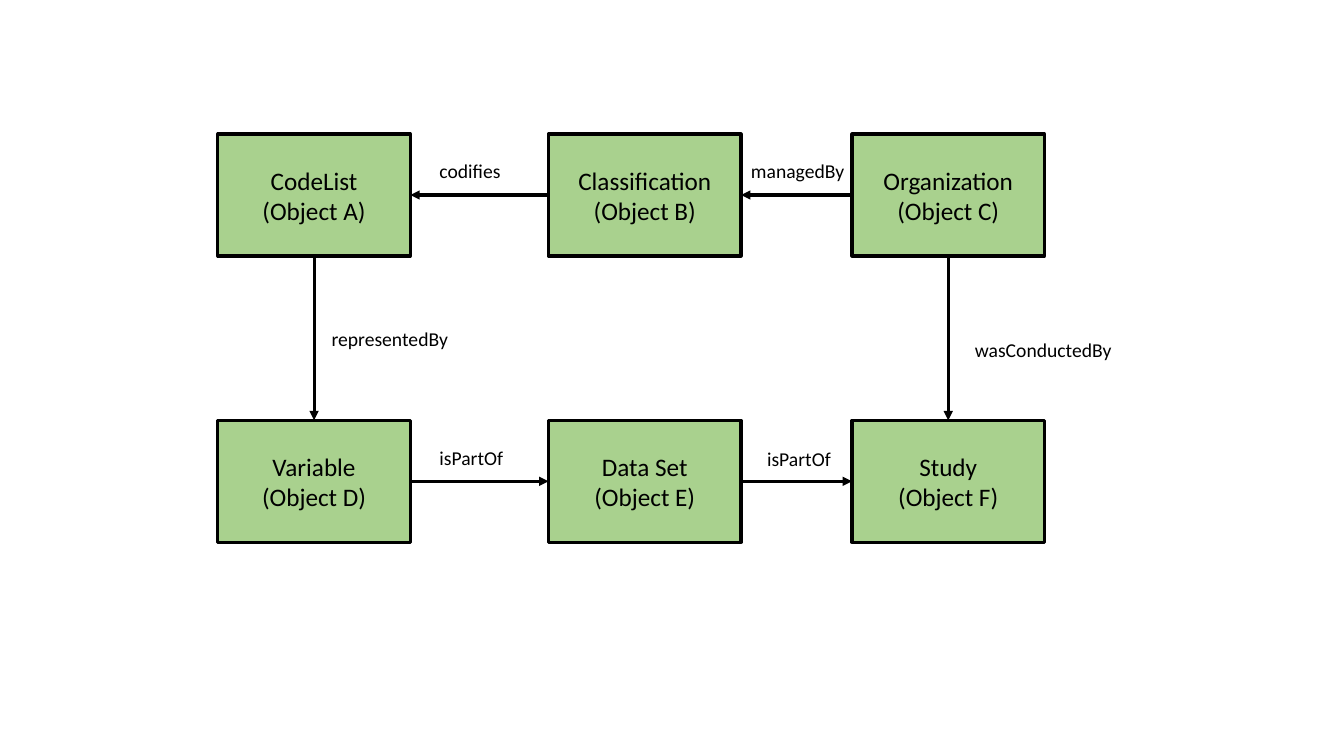
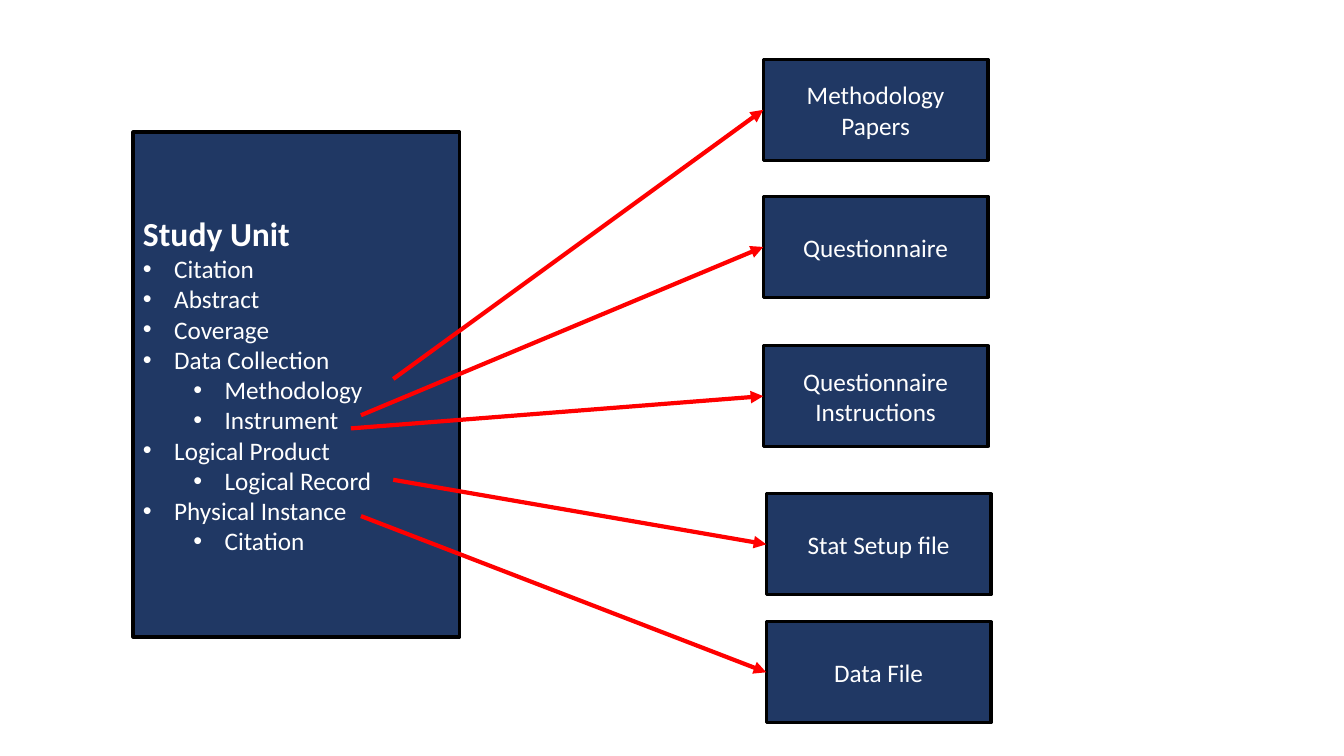
from pptx import Presentation
from pptx.dml.color import RGBColor
from pptx.enum.shapes import MSO_CONNECTOR, MSO_SHAPE
from pptx.enum.text import MSO_ANCHOR, MSO_AUTO_SIZE, PP_ALIGN
from pptx.oxml.ns import qn
from pptx.util import Inches, Pt
from lxml import etree

RECT = MSO_SHAPE.RECTANGLE
STRAIGHT = MSO_CONNECTOR.STRAIGHT
MIDDLE = MSO_ANCHOR.MIDDLE
FIT = MSO_AUTO_SIZE.SHAPE_TO_FIT_TEXT
LEFT, CENTER = PP_ALIGN.LEFT, PP_ALIGN.CENTER
TOP_SIDE, LEFT_SIDE, BOTTOM_SIDE, RIGHT_SIDE = range(4)

# Shared look
COLORS = {"green": "A9D18E", "navy": "203864", "black": "000000",
          "white": "FFFFFF", "red": "FF0000"}
FONTS = {
    "head": {"name": "Calibri", "size": Pt(24), "bold": True},
    "body": {"name": "Calibri", "size": Pt(18), "bold": False},
    "label": {"name": "Calibri", "size": Pt(14), "bold": False},
}
INDENT, STEP = 0.31, 0.5

# Relation map: grid of two rows by three columns
COLS = (2.16, 5.44, 8.45)
ROWS = (1.33, 4.17)
CELL = (1.91, 1.21)
OBJECTS = (("CodeList", "Classification", "Organization"),
           ("Variable", "Data Set", "Study"))
# from cell, side, to cell, side
LINKS = (
    ((0, 2), LEFT_SIDE, (0, 1), RIGHT_SIDE),
    ((0, 1), LEFT_SIDE, (0, 0), RIGHT_SIDE),
    ((0, 0), BOTTOM_SIDE, (1, 0), TOP_SIDE),
    ((1, 0), RIGHT_SIDE, (1, 1), LEFT_SIDE),
    ((1, 1), RIGHT_SIDE, (1, 2), LEFT_SIDE),
    ((0, 2), BOTTOM_SIDE, (1, 2), TOP_SIDE),
)
# text, left, top, width
LABELS = (
    ("codifies", 4.26, 1.53, 0.82),
    ("managedBy", 7.35, 1.53, 1.14),
    ("representedBy", 3.19, 3.19, 1.37),
    ("isPartOf", 4.26, 4.37, 0.92),
    ("isPartOf", 7.51, 4.38, 0.84),
    ("wasConductedBy", 9.57, 3.3, 1.61),
)

# Study unit: outline with level, then linked files
OUTLINE = (
    ("Citation", 0), ("Abstract", 0), ("Coverage", 0),
    ("Data Collection", 0), ("Methodology", 1), ("Instrument", 1),
    ("Logical Product", 0), ("Logical Record", 1),
    ("Physical Instance", 0), ("Citation", 1),
)
FILE = (2.23, 1)
# text, left, top, start of arrow
FILES = (
    ("Methodology Papers", 7.57, 0.59, (3.9, 3.76)),
    ("Questionnaire", 7.57, 1.95, (3.58, 4.12)),
    ("Questionnaire Instructions", 7.57, 3.43, (3.48, 4.25)),
    ("Stat Setup file", 7.6, 4.9, (3.9, 4.76)),
    ("Data File", 7.6, 6.17, (3.58, 5.12)),
)


def color(name):
    return RGBColor.from_string(COLORS[name])


def write(para, text, style, ink, align=LEFT):
    para.alignment = align
    run = para.add_run()
    run.text = text
    for key, value in FONTS[style].items():
        setattr(run.font, key, value)
    run.font.color.rgb = color(ink)


def bullet(para, level):
    para.level = level
    props = para._p.get_or_add_pPr()
    props.set("marL", str(Inches(INDENT + level * STEP)))
    props.set("indent", str(Inches(-INDENT)))
    etree.SubElement(props, qn("a:buFont")).set("typeface", "Arial")
    etree.SubElement(props, qn("a:buChar")).set("char", "•")


def box(slide, left, top, size, fill, lines=(), ink="black"):
    shape = slide.shapes.add_shape(
        RECT, *(Inches(n) for n in (left, top, *size)))
    shape.shadow.inherit = False
    shape.fill.solid()
    shape.fill.fore_color.rgb = color(fill)
    shape.line.color.rgb = color("black")
    shape.line.width = Pt(2.25)
    frame = shape.text_frame
    frame.word_wrap = True
    frame.vertical_anchor = MIDDLE
    for i, line in enumerate(lines):
        para = frame.add_paragraph() if i else frame.paragraphs[0]
        write(para, line, "body", ink, CENTER)
    return shape


def label(slide, text, left, top, width):
    frame = slide.shapes.add_textbox(
        *(Inches(n) for n in (left, top, width, 0.34))).text_frame
    frame.word_wrap = False
    frame.auto_size = FIT
    write(frame.paragraphs[0], text, "label", "black")


def arrow(slide, goal, side, ink, width, start=(0, 0)):
    x, y = (Inches(n) for n in start)
    line = slide.shapes.add_connector(STRAIGHT, x, y, x, y)
    line.end_connect(goal, side)
    line.line.color.rgb = color(ink)
    line.line.width = Pt(width)
    etree.SubElement(line.line._get_or_add_ln(),
                     qn("a:tailEnd")).set("type", "triangle")
    etree.SubElement(line._element.spPr, qn("a:effectLst"))
    return line


def draw_map(slide):
    cells = {}
    for r, names in enumerate(OBJECTS):
        for c, name in enumerate(names):
            mark = "ABCDEF"[r * len(COLS) + c]
            cells[r, c] = box(slide, COLS[c], ROWS[r], CELL, "green",
                              (name, f"(Object {mark})"))
    for source, out, goal, side in LINKS:
        line = arrow(slide, cells[goal], side, "black", 2.25)
        line.begin_connect(cells[source], out)
    for item in LABELS:
        label(slide, *item)


def draw_unit(slide):
    # Outline panel
    frame = box(slide, 1.32, 1.31, (3.24, 5.01), "navy").text_frame
    write(frame.paragraphs[0], "Study Unit", "head", "white")
    for text, level in OUTLINE:
        para = frame.add_paragraph()
        write(para, text, "body", "white")
        bullet(para, level)
    # Files and their arrows
    for text, left, top, start in FILES:
        goal = box(slide, left, top, FILE, "navy", (text,), "white")
        arrow(slide, goal, LEFT_SIDE, "red", 3, start)


def main():
    deck = Presentation()
    deck.slide_width, deck.slide_height = Inches(13.33), Inches(7.5)
    blank = deck.slide_layouts[6]
    for draw in (draw_map, draw_unit):
        draw(deck.slides.add_slide(blank))
    deck.save("out.pptx")


if __name__ == "__main__":
    main()
